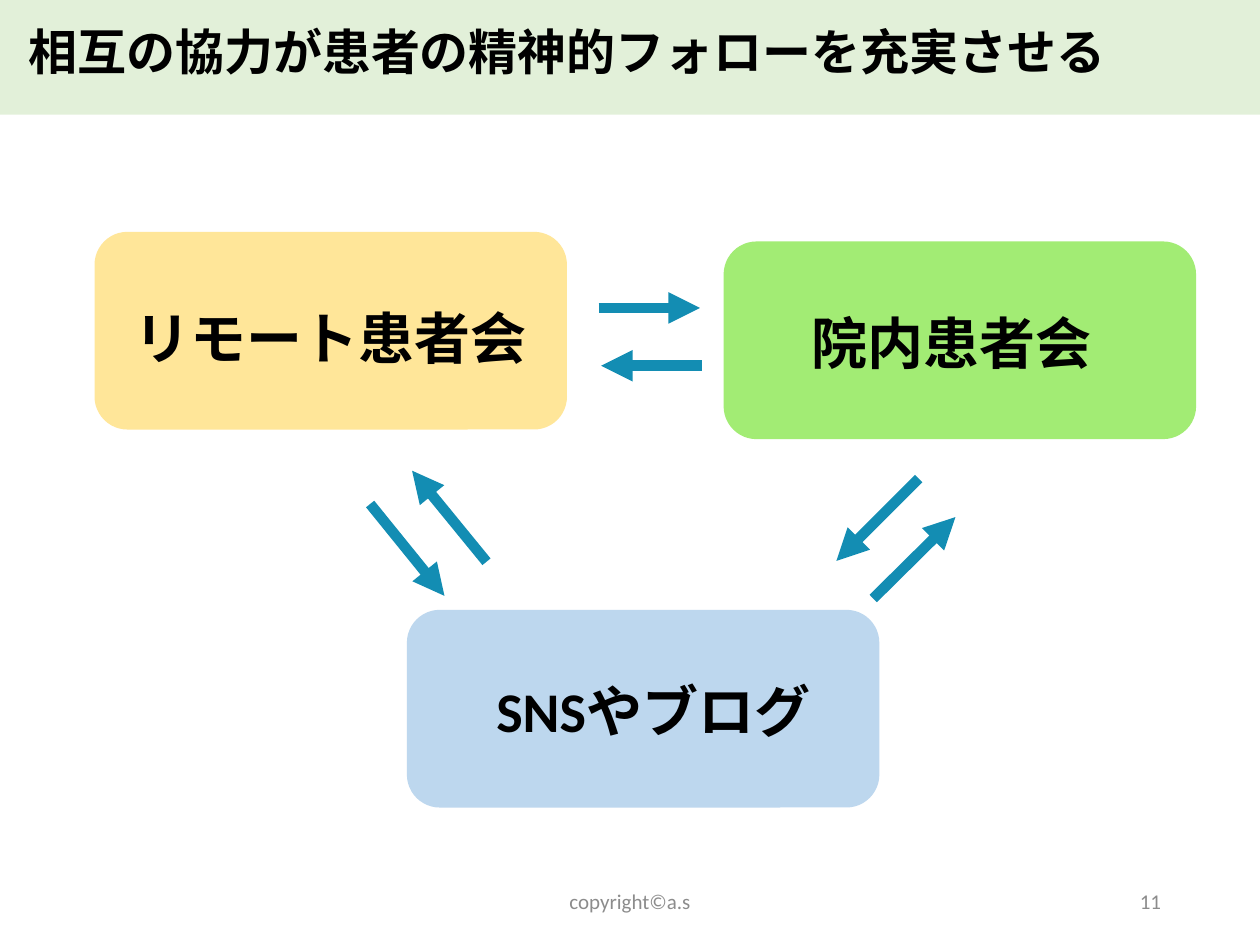
from lxml.etree import SubElement
from pptx import Presentation
from pptx.dml.color import RGBColor
from pptx.enum.shapes import MSO_CONNECTOR, MSO_SHAPE
from pptx.enum.text import MSO_ANCHOR, PP_ALIGN
from pptx.oxml.ns import qn
from pptx.util import Pt

COLORS = {
    "band": "E2F0D9",
    "remote": "FFE699",
    "hospital": "A2EC74",
    "social": "BDD7EE",
    "arrow": "138DB3",
    "text": "000000",
    "footer": "8C8C8C",
}
FONT = "Calibri"
CARD_WIDTH, CARD_HEIGHT = 270, 113


def color(name):
    return RGBColor.from_string(COLORS[name])


def add_panel(page, kind, left, top, width, height, fill):
    panel = page.shapes.add_shape(kind, Pt(left), Pt(top), Pt(width), Pt(height))
    panel.shadow.inherit = False
    panel.fill.solid()
    panel.fill.fore_color.rgb = color(fill)
    panel.line.fill.background()


def add_text(page, left, top, width, height, text, size, fill="text",
             bold=True, align=PP_ALIGN.LEFT, anchor=MSO_ANCHOR.TOP):
    box = page.shapes.add_textbox(Pt(left), Pt(top), Pt(width), Pt(height))
    frame = box.text_frame
    frame.word_wrap = True
    frame.vertical_anchor = anchor
    para = frame.paragraphs[0]
    para.alignment = align
    span = para.add_run()
    span.text = text
    span.font.name = FONT
    span.font.size = Pt(size)
    span.font.bold = bold
    span.font.color.rgb = color(fill)


def add_footer(page, left, width, text, align):
    add_text(page, left, 500.5, width, 28.75, text, 12, "footer", False,
             align, MSO_ANCHOR.MIDDLE)


def add_arrow(page, start_x, start_y, end_x, end_y):
    arrow = page.shapes.add_connector(
        MSO_CONNECTOR.STRAIGHT, Pt(start_x), Pt(start_y), Pt(end_x), Pt(end_y))
    arrow.line.color.rgb = color("arrow")
    arrow.line.width = Pt(6)
    SubElement(arrow.line._get_or_add_ln(), qn("a:tailEnd"), type="triangle")
    SubElement(arrow._element.spPr, qn("a:effectLst"))


def main():
    deck = Presentation()
    deck.slide_width, deck.slide_height = Pt(720), Pt(540)
    page = deck.slides.add_slide(deck.slide_layouts[6])

    for left, top, fill in [(232.5, 348.5, "social"),
                            (413.5, 138, "hospital"),
                            (54, 132.5, "remote")]:
        add_panel(page, MSO_SHAPE.ROUNDED_RECTANGLE, left, top,
                  CARD_WIDTH, CARD_HEIGHT, fill)
    add_panel(page, MSO_SHAPE.RECTANGLE, 0, 0, 720, 65.5, "band")

    add_text(page, 9.25, 8.5, 637, 41,
             "相互の協力が患者の精神的フォローを充実させる", 28)
    for left, top, width, label in [(70, 170, 243.5, "リモート患者会"),
                                    (456.5, 173, 181.5, "院内患者会"),
                                    (276.5, 383, 204, "SNSやブログ")]:
        add_text(page, left, top, width, 46, label, 32)

    add_footer(page, 238.5, 243, "copyright©a.s", PP_ALIGN.CENTER)
    add_footer(page, 508.5, 162, "11", PP_ALIGN.RIGHT)

    for start_x, start_y, end_x, end_y in [(342, 176, 400, 176),
                                           (401, 209, 343.5, 209),
                                           (525, 273.5, 478, 320.5),
                                           (499, 342, 546, 295.5),
                                           (278, 321, 235.5, 269),
                                           (211.5, 288, 254, 340.5)]:
        add_arrow(page, start_x, start_y, end_x, end_y)

    deck.save("out.pptx")


if __name__ == "__main__":
    main()
